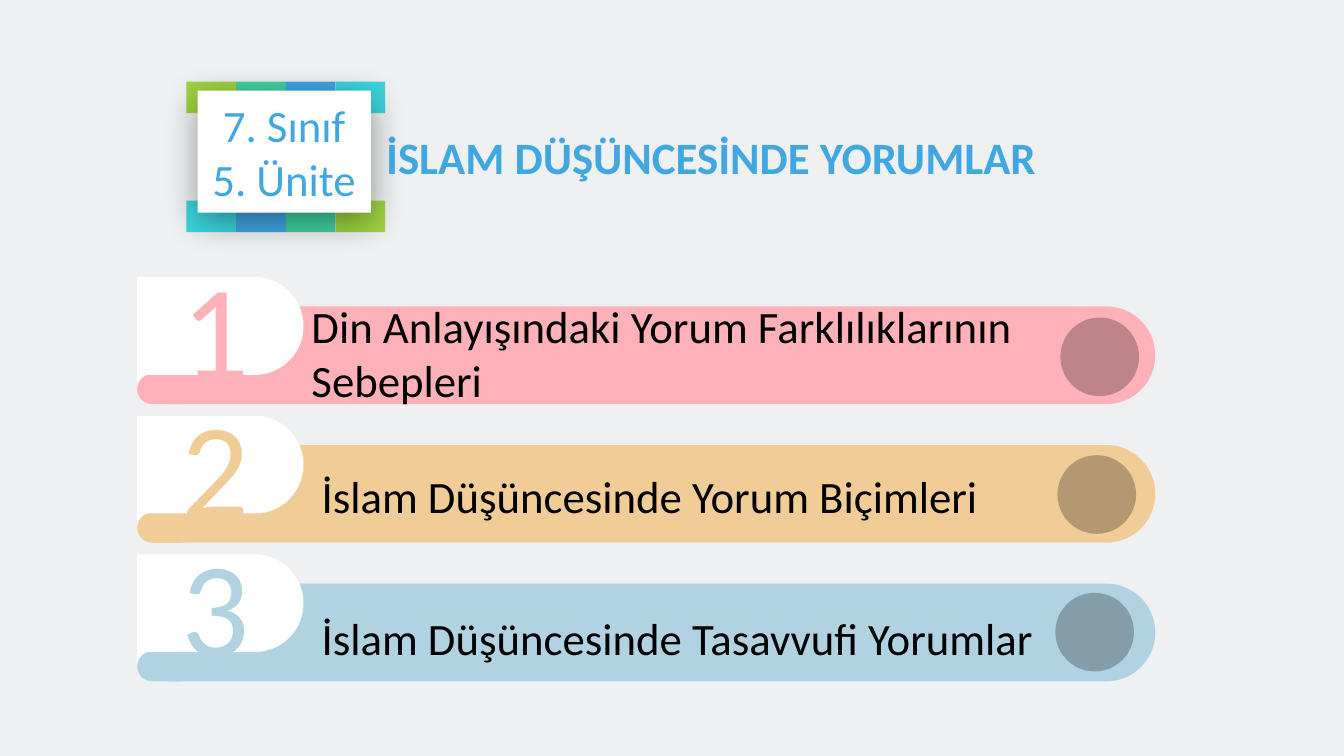
from dataclasses import dataclass

from lxml.etree import SubElement
from pptx import Presentation
from pptx.dml.color import RGBColor
from pptx.enum.shapes import MSO_SHAPE
from pptx.enum.text import MSO_ANCHOR, MSO_AUTO_SIZE, PP_ALIGN
from pptx.oxml.ns import qn
from pptx.shapes.autoshape import Shape
from pptx.slide import Slide
from pptx.util import Pt

WHITE, BLACK, BLUE = "FFFFFF", "000000", "40A7E1"
STRIPES = ["9ED343", "43D1A1", BLUE, "3CD6DE"]
ROW_STEP = 99
CIRCLE_STEP = 98.3


@dataclass(frozen=True)
class Area:
    left: float
    top: float
    width: float
    height: float

    def down(self, distance: float) -> "Area":
        return Area(self.left, self.top + distance, self.width, self.height)

    def turned(self) -> "Area":
        shift = (self.width - self.height) / 2
        return Area(self.left + shift, self.top - shift, self.height, self.width)


@dataclass(frozen=True)
class Topic:
    text: str
    color: str
    label: Area
    inset: float
    circle_left: float


TOPICS = [
    Topic("Din Anlayışındaki Yorum Farklılıklarının Sebepleri", "FEB1B9",
          Area(222.5, 213.1, 603.4, 77.8), 0, 757.4),
    Topic("İslam Düşüncesinde Yorum Biçimleri", "F0CD97",
          Area(222.5, 331.2, 488.2, 46.1), 7.2, 755.3),
    Topic("İslam Düşüncesinde Tasavvufi Yorumlar", "B1D2E1",
          Area(222.5, 432.7, 528.5, 46.1), 7.2, 753.8),
]


def set_color(target, color: str) -> None:
    if hasattr(target, "solid"):
        target.solid()
        target = target.fore_color
    target.rgb = RGBColor.from_string(color)


def apply(target, values: dict) -> None:
    for name, value in values.items():
        setattr(target, name, value)


def place(box: Shape, area: Area) -> None:
    apply(box, {"left": Pt(area.left), "top": Pt(area.top),
                "width": Pt(area.width), "height": Pt(area.height)})


def add_figure(page: Slide, kind: MSO_SHAPE, area: Area, color: str) -> Shape:
    box = page.shapes.add_shape(kind, Pt(area.left), Pt(area.top),
                                Pt(area.width), Pt(area.height))
    set_color(box.fill, color)
    box.line.fill.background()
    box.shadow.inherit = False
    return box


def add_round_end(page: Slide, area: Area, color: str, rotation: int) -> None:
    box = add_figure(page, MSO_SHAPE.ROUND_2_SAME_RECTANGLE, area.turned(), color)
    box.rotation = rotation
    box.adjustments[0] = 0.5
    box.adjustments[1] = 0


def write(box: Shape, lines: list[str], color: str, size: float = 32,
          bold: bool = False, align: PP_ALIGN = PP_ALIGN.LEFT,
          inset: float = 0) -> None:
    frame = box.text_frame
    apply(frame, {"word_wrap": True, "auto_size": MSO_AUTO_SIZE.NONE,
                  "vertical_anchor": MSO_ANCHOR.MIDDLE,
                  "margin_left": Pt(inset), "margin_right": Pt(inset),
                  "margin_top": Pt(0), "margin_bottom": Pt(0)})
    frame.text = "\n".join(lines)
    for para in frame.paragraphs:
        apply(para, {"alignment": align, "space_before": Pt(0), "line_spacing": 1.0})
        properties = para._p.get_or_add_pPr()
        properties.set("marL", "0")
        properties.set("indent", "0")
        SubElement(properties, qn("a:buNone"))
        for span in para.runs:
            apply(span.font, {"name": "Calibri", "size": Pt(size), "bold": bold})
            set_color(span.font.color, color)


def bring_forward(page: Slide, box: Shape) -> None:
    page.shapes._spTree.append(box._element)


def set_alpha(box: Shape, percent: int) -> None:
    color = box._element.spPr.find(qn("a:solidFill"))[0]
    SubElement(color, qn("a:alpha"), val=str(percent * 1000))


def add_shadow(box: Shape) -> None:
    effects = box._element.spPr.find(qn("a:effectLst"))
    shadow = SubElement(effects, qn("a:outerShdw"), blurRad=str(Pt(26)),
                        dist=str(Pt(6)), dir="5400000", algn="t", rotWithShape="0")
    color = SubElement(shadow, qn("a:srgbClr"), val=BLACK)
    SubElement(color, qn("a:alpha"), val="40000")


def draw_topic(page: Slide, index: int, topic: Topic, label: Shape) -> None:
    drop = index * ROW_STEP
    add_figure(page, MSO_SHAPE.RECTANGLE, Area(98, 267.8, 21.6, 10.8).down(drop), WHITE)
    add_round_end(page, Area(124.6, 218.9, 700.6, 69.8).down(drop), topic.color, 90)
    add_round_end(page, Area(98, 267.1, 31.7, 21.6).down(drop), topic.color, 270)
    place(label, topic.label)
    write(label, [topic.text], BLACK, inset=topic.inset)
    bring_forward(page, label)
    circle = Area(topic.circle_left, 226.8, 56.2, 56.2).down(index * CIRCLE_STEP)
    set_alpha(add_figure(page, MSO_SHAPE.OVAL, circle, BLACK), 25)
    add_round_end(page, Area(98, 198, 118.8, 69.8).down(drop), WHITE, 90)
    area = Area(129.6, 207.4, 46.1, 50.4).down(drop)
    number = page.shapes.add_textbox(Pt(area.left), Pt(area.top),
                                     Pt(area.width), Pt(area.height))
    write(number, [str(index + 1)], topic.color, size=96, align=PP_ALIGN.CENTER)


def draw_heading(page: Slide) -> None:
    for top, colors in ((58.3, STRIPES), (143.3, STRIPES[::-1])):
        for column, color in enumerate(colors):
            area = Area(133.2 + column * 35.5, top, 35.5, 22.5)
            add_figure(page, MSO_SHAPE.RECTANGLE, area, color)
    card = add_figure(page, MSO_SHAPE.RECTANGLE, Area(141.1, 64.8, 123.8, 87.1), WHITE)
    add_shadow(card)
    write(card, ["7. Sınıf", "5. Ünite"], BLUE, align=PP_ALIGN.CENTER)
    title = page.shapes.title
    place(title, Area(275.8, 92.2, 493.2, 38.9))
    write(title, ["İSLAM DÜŞÜNCESİNDE YORUMLAR"], BLUE, bold=True)
    bring_forward(page, title)


def main() -> None:
    deck = Presentation()
    apply(deck, {"slide_width": Pt(960), "slide_height": Pt(540)})
    page = deck.slides.add_slide(deck.slide_layouts.get_by_name("Comparison"))
    set_color(page.background.fill, "EEF0F2")
    labels = list(page.placeholders)[1:]
    for index, (topic, label) in enumerate(zip(TOPICS, labels)):
        draw_topic(page, index, topic, label)
    for spare in labels[len(TOPICS):]:
        page.shapes._spTree.remove(spare._element)
    draw_heading(page)
    deck.save("out.pptx")


if __name__ == "__main__":
    main()
